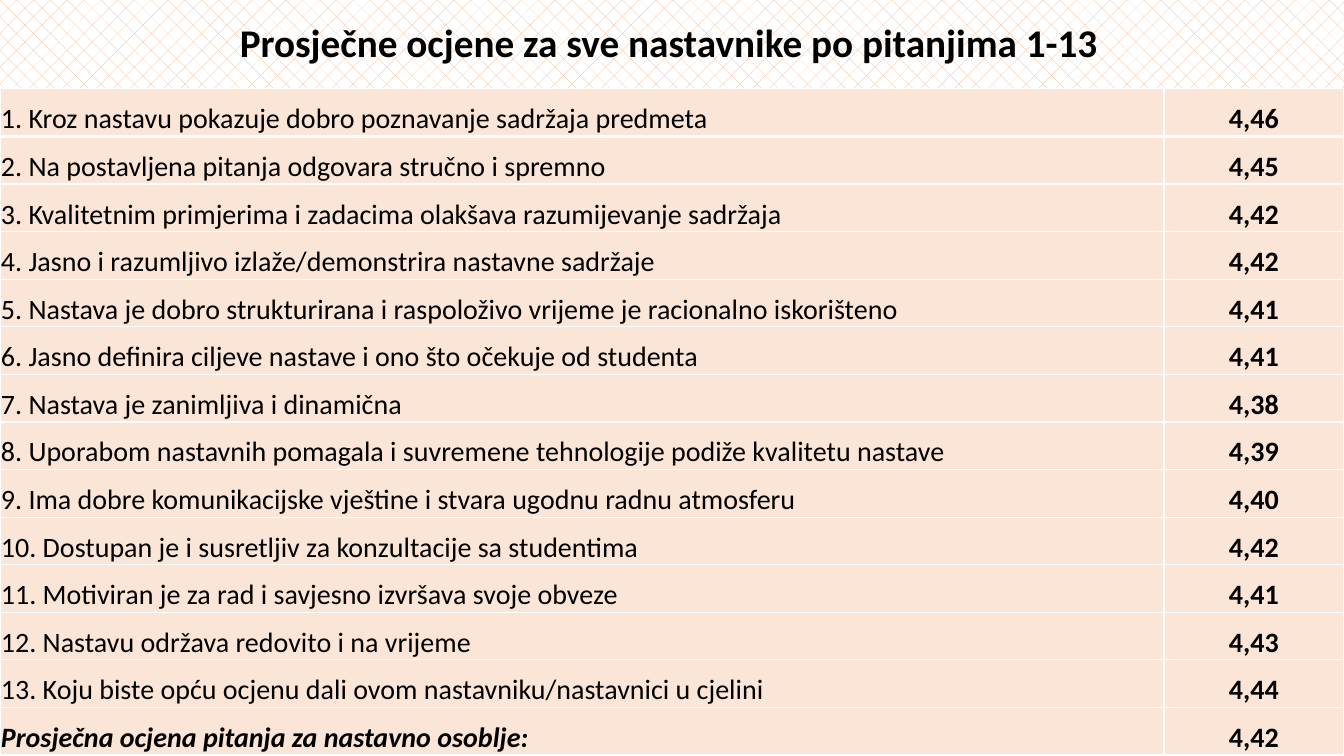
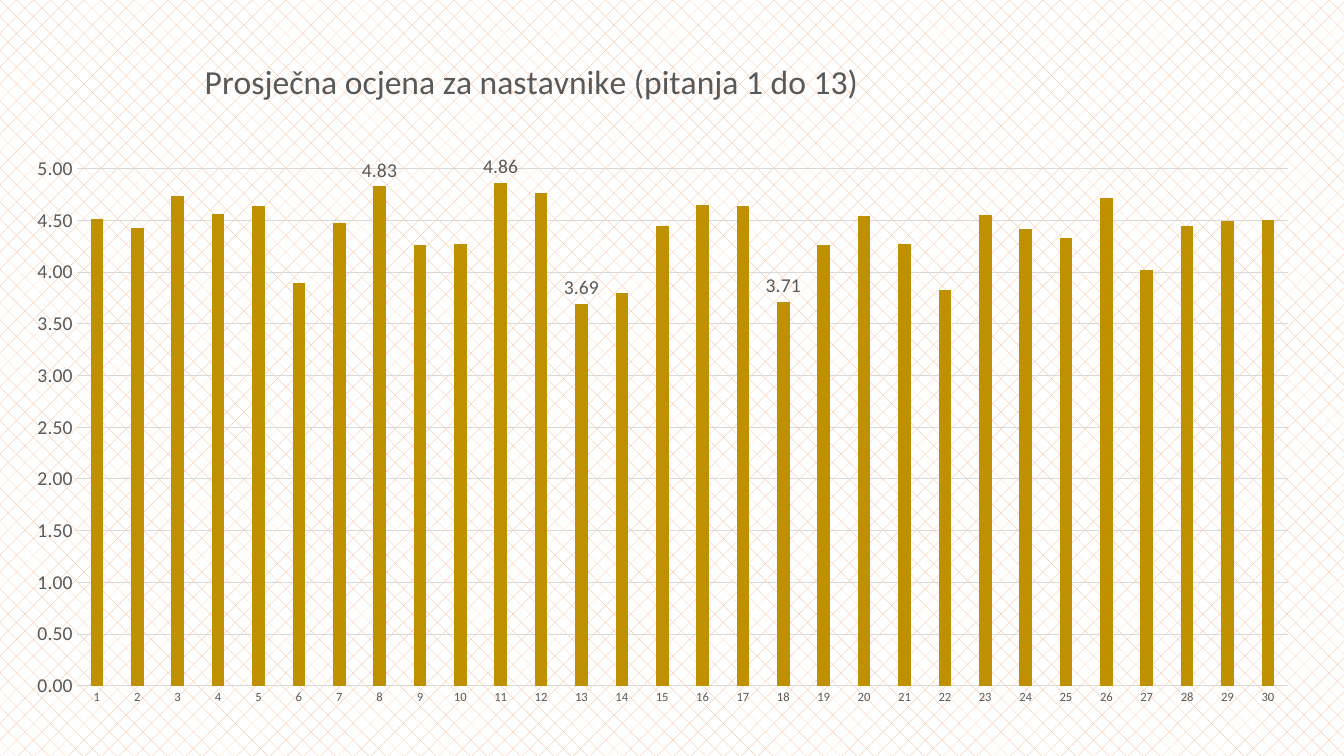
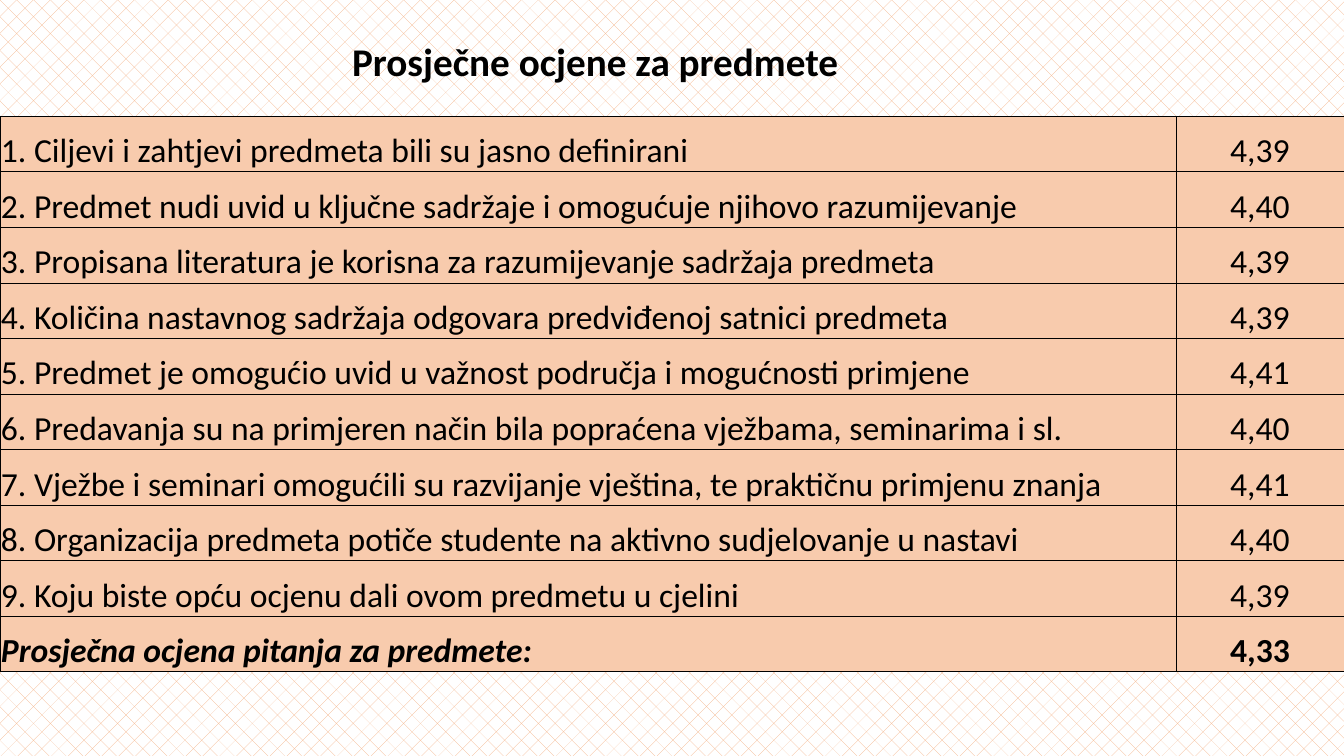
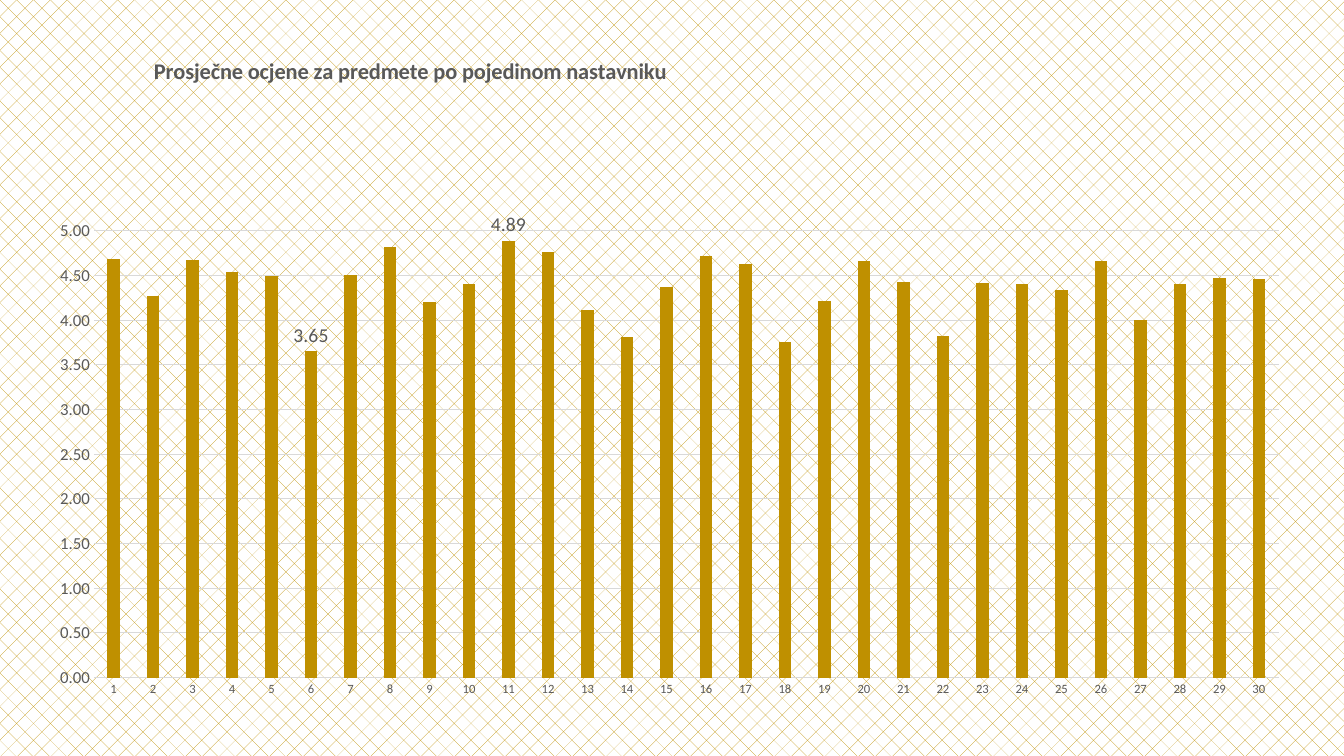
"""Build four slides of average survey grades for teachers and courses."""
from lxml.etree import SubElement
from pptx import Presentation
from pptx.chart.data import CategoryChartData
from pptx.dml.color import RGBColor
from pptx.enum.chart import XL_CHART_TYPE, XL_LABEL_POSITION, XL_TICK_MARK
from pptx.enum.dml import MSO_PATTERN
from pptx.enum.text import MSO_ANCHOR, PP_ALIGN
from pptx.oxml import parse_xml
from pptx.oxml.ns import nsdecls, qn
from pptx.util import Pt

BLACK = RGBColor(0x00, 0x00, 0x00)
WHITE = RGBColor(0xFF, 0xFF, 0xFF)
GREY = RGBColor(0x59, 0x59, 0x59)
GRID = RGBColor(0xD9, 0xD9, 0xD9)
GOLD = RGBColor(0xBF, 0x90, 0x00)
ORANGE = RGBColor(0xF4, 0xB1, 0x83)
PEACH = RGBColor(0xF8, 0xCB, 0xAD)
PALE_PEACH = RGBColor(0xFB, 0xE5, 0xD6)
FONT = "Calibri"

TEACHER_TABLE = {
    "title": "Prosječne ocjene za sve nastavnike po pitanjima 1-13",
    "title_box": (135, 9.4, 685, 41),
    "top": 63.5, "columns": (831.4, 128.6), "row_height": 34,
    "size": 20, "fill": PALE_PEACH, "bold_grades": True,
    "border": WHITE, "border_width": 1, "first_rule": 3,
    "rows": [
        ("1. Kroz nastavu pokazuje dobro poznavanje sadržaja predmeta", "4,46"),
        ("2. Na postavljena pitanja odgovara stručno i spremno", "4,45"),
        ("3. Kvalitetnim primjerima i zadacima olakšava razumijevanje sadržaja", "4,42"),
        ("4. Jasno i razumljivo izlaže/demonstrira nastavne sadržaje", "4,42"),
        ("5. Nastava je dobro strukturirana i raspoloživo vrijeme je racionalno iskorišteno", "4,41"),
        ("6. Jasno definira ciljeve nastave i ono što očekuje od studenta", "4,41"),
        ("7. Nastava je zanimljiva i dinamična", "4,38"),
        ("8. Uporabom nastavnih pomagala i suvremene tehnologije podiže kvalitetu nastave", "4,39"),
        ("9. Ima dobre komunikacijske vještine i stvara ugodnu radnu atmosferu", "4,40"),
        ("10. Dostupan je i susretljiv za konzultacije sa studentima", "4,42"),
        ("11. Motiviran je za rad i savjesno izvršava svoje obveze", "4,41"),
        ("12. Nastavu održava redovito i na vrijeme", "4,43"),
        ("13. Koju biste opću ocjenu dali ovom nastavniku/nastavnici u cjelini", "4,44"),
        ("Prosječna ocjena pitanja za nastavno osoblje:", "4,42"),
    ],
}
COURSE_TABLE = {
    "title": "Prosječne ocjene za predmete",
    "title_box": (242.6, 23, 365, 41),
    "top": 83, "columns": (840, 120), "row_height": 39.7,
    "size": 24, "fill": PEACH, "bold_grades": False,
    "border": BLACK, "border_width": 0.5, "first_rule": 0.5,
    "rows": [
        ("1. Ciljevi i zahtjevi predmeta bili su jasno definirani", "4,39"),
        ("2. Predmet nudi uvid u ključne sadržaje i omogućuje njihovo razumijevanje", "4,40"),
        ("3. Propisana literatura je korisna za razumijevanje sadržaja predmeta", "4,39"),
        ("4. Količina nastavnog sadržaja odgovara predviđenoj satnici predmeta", "4,39"),
        ("5. Predmet je omogućio uvid u važnost područja i mogućnosti primjene", "4,41"),
        ("6. Predavanja su na primjeren način bila popraćena vježbama, seminarima i sl.", "4,40"),
        ("7. Vježbe i seminari omogućili su razvijanje vještina, te praktičnu primjenu znanja", "4,41"),
        ("8. Organizacija predmeta potiče studente na aktivno sudjelovanje u nastavi", "4,40"),
        ("9. Koju biste opću ocjenu dali ovom predmetu u cjelini", "4,39"),
        ("Prosječna ocjena pitanja za predmete:", "4,33"),
    ],
}
TEACHER_CHART = {
    "title": "Prosječna ocjena za nastavnike (pitanja 1 do 13)",
    "title_size": 24, "title_bold": False, "title_at": {"x": 0.13, "y": 0.03},
    "frame": (24, 23, 907, 490), "axis_size": 14,
    "plot": {"x": 0.034, "y": 0.199, "w": 0.954, "h": 0.754},
    "labelled": (8, 11, 13, 18),
    "grades": [4.51, 4.43, 4.74, 4.56, 4.64, 3.89, 4.47, 4.83, 4.26, 4.27,
               4.86, 4.76, 3.69, 3.8, 4.45, 4.65, 4.64, 3.71, 4.26, 4.54,
               4.27, 3.83, 4.55, 4.42, 4.33, 4.72, 4.02, 4.45, 4.49, 4.5],
}
COURSE_CHART = {
    "title": "Prosječne ocjene za predmete po pojedinom nastavniku",
    "title_size": 16, "title_bold": True, "title_at": {"x": 0.08, "y": 0.01},
    "frame": (36, 32.4, 888, 475), "axis_size": 12,
    "plot": {"x": 0.035, "y": 0.279, "w": 0.953, "h": 0.672},
    "labelled": (6, 11),
    "grades": [4.69, 4.27, 4.67, 4.54, 4.5, 3.65, 4.51, 4.82, 4.2, 4.4,
               4.89, 4.76, 4.11, 3.81, 4.37, 4.72, 4.63, 3.76, 4.22, 4.66,
               4.43, 3.82, 4.42, 4.41, 4.34, 4.66, 4, 4.41, 4.47, 4.46],
}


def assign(target, **values):
    for name, value in values.items():
        setattr(target, name, value)


def style_font(font, size, color, bold=False, italic=False):
    assign(font, name=FONT, size=Pt(size), bold=bold, italic=italic)
    font.color.rgb = color


def write(text_frame, text, align, *style):
    paragraph = text_frame.paragraphs[0]
    paragraph.alignment = align
    run = paragraph.add_run()
    run.text = text
    style_font(run.font, *style)


def add_patterned_slide(deck, line_color):
    slide = deck.slides.add_slide(deck.slide_layouts[6])
    fill = slide.background.fill
    fill.patterned()
    fill.pattern = MSO_PATTERN.DOTTED_DIAMOND
    fill.fore_color.rgb, fill.back_color.rgb = line_color, WHITE
    return slide


def set_borders(cell, color, widths):
    properties = cell._tc.get_or_add_tcPr()
    for side, width in zip("LRTB", widths):
        rule = SubElement(properties, qn(f"a:ln{side}"), w=str(Pt(width)))
        solid = SubElement(rule, qn("a:solidFill"))
        SubElement(solid, qn("a:srgbClr"), val=str(color))


def add_grade_table(slide, content):
    rows, columns = content["rows"], content["columns"]
    height = content["row_height"]
    table = slide.shapes.add_table(
        len(rows), len(columns), 0, Pt(content["top"]),
        Pt(sum(columns)), Pt(height * len(rows))).table
    assign(table, first_row=False, horz_banding=False)
    for column, width in zip(table.columns, columns):
        column.width = Pt(width)
    thin, first_rule = content["border_width"], content["first_rule"]
    for index, texts in enumerate(rows):
        table.rows[index].height = Pt(height)
        summary = index == len(rows) - 1
        widths = (thin, thin,
                  first_rule if index == 1 else thin,
                  first_rule if index == 0 else thin)
        formats = ((PP_ALIGN.LEFT, summary, summary),
                   (PP_ALIGN.CENTER, summary or content["bold_grades"], False))
        for cell, text, (align, bold, italic) in zip(table.rows[index].cells, texts, formats):
            set_borders(cell, content["border"], widths)
            cell.fill.solid()
            cell.fill.fore_color.rgb = content["fill"]
            assign(cell, vertical_anchor=MSO_ANCHOR.BOTTOM, margin_left=Pt(0.7),
                   margin_right=Pt(0.7), margin_top=Pt(0.7), margin_bottom=0)
            write(cell.text_frame, text, align, content["size"], BLACK, bold, italic)
    heading = slide.shapes.add_textbox(*map(Pt, content["title_box"])).text_frame
    heading.word_wrap = True
    write(heading, content["title"], PP_ALIGN.CENTER, 28, BLACK, True)


def set_layout(parent, position, place, inner=False):
    for former in parent.findall(qn("c:layout")):
        parent.remove(former)
    layout = parse_xml(f'<c:layout {nsdecls("c")}><c:manualLayout/></c:layout>')
    values = {"layoutTarget": "inner"} if inner else {}
    values.update({"xMode": "edge", "yMode": "edge"}, **place)
    for name, value in values.items():
        SubElement(layout[0], qn(f"c:{name}"), val=str(value))
    parent.insert(position, layout)


def add_grade_chart(slide, content):
    grades = content["grades"]
    data = CategoryChartData(number_format="0.00")
    data.categories = [str(number) for number in range(1, len(grades) + 1)]
    data.add_series("Series 1", grades)
    chart = slide.shapes.add_chart(
        XL_CHART_TYPE.COLUMN_CLUSTERED, *map(Pt, content["frame"]), data).chart
    assign(chart, has_legend=False, has_title=True)
    style_font(chart.font, 10, BLACK)
    write(chart.chart_title.text_frame, content["title"], PP_ALIGN.LEFT,
          content["title_size"], GREY, content["title_bold"])
    set_layout(chart.chart_title._element, 1, content["title_at"])
    set_layout(chart._chartSpace.chart.plotArea, 0, content["plot"], inner=True)

    grade_axis, number_axis = chart.value_axis, chart.category_axis
    for axis, size in ((grade_axis, content["axis_size"]), (number_axis, 9)):
        assign(axis, major_tick_mark=XL_TICK_MARK.NONE, minor_tick_mark=XL_TICK_MARK.NONE)
        style_font(axis.tick_labels.font, size, GREY)
    assign(grade_axis, minimum_scale=0, maximum_scale=5, major_unit=0.5)
    assign(grade_axis.tick_labels, number_format="0.00", number_format_is_linked=False)
    grade_axis.format.line.fill.background()
    for line in (number_axis.format.line, grade_axis.major_gridlines.format.line):
        line.width = Pt(0.75)
        line.color.rgb = GRID

    plot = chart.plots[0]
    assign(plot, gap_width=219, overlap=-27, vary_by_categories=False)
    series = plot.series[0]
    series.format.fill.solid()
    series.format.fill.fore_color.rgb = GOLD
    series.data_labels.show_value = False
    for number in content["labelled"]:
        label = series.points[number - 1].data_label
        style_font(label.font, 14, GREY)
        label.position = XL_LABEL_POSITION.OUTSIDE_END


def main():
    deck = Presentation()
    assign(deck, slide_width=Pt(960), slide_height=Pt(540))
    for add_content, content, line_color in (
            (add_grade_table, TEACHER_TABLE, ORANGE),
            (add_grade_chart, TEACHER_CHART, ORANGE),
            (add_grade_table, COURSE_TABLE, ORANGE),
            (add_grade_chart, COURSE_CHART, GOLD)):
        add_content(add_patterned_slide(deck, line_color), content)
    deck.save("out.pptx")


if __name__ == "__main__":
    main()
